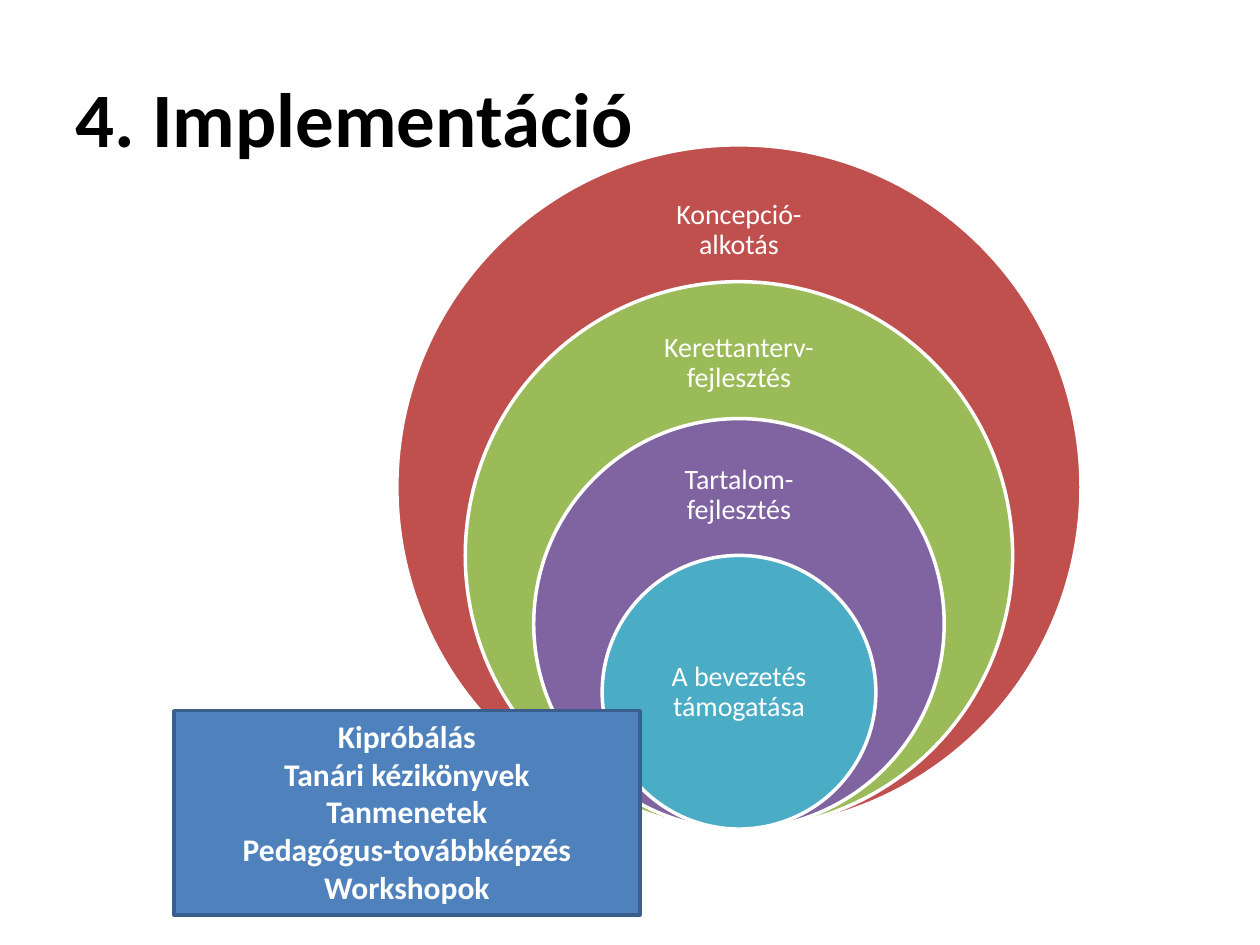
from dataclasses import dataclass

from pptx import Presentation
from pptx.dml.color import RGBColor
from pptx.enum.shapes import MSO_SHAPE as Shape
from pptx.enum.text import MSO_ANCHOR as Anchor, PP_ALIGN as Align
from pptx.util import Inches, Pt


@dataclass(frozen=True)
class Theme:
    font: str = "Calibri"
    dark: str = "000000"
    light: str = "FFFFFF"
    box: str = "4F81BD"
    box_line: str = "3A5F8C"
    rings: tuple = ("C0504D", "9BBB59", "8064A2", "4BACC6")
    title_size: int = 44
    box_size: int = 18
    label_size: int = 16
    line_width: int = 2


THEME = Theme()
WIDTH, HEIGHT = 10, 7.5
CENTER_X, BASE_Y, OUTER = 5.865, 6.58, 5.43

# Label, and its top and height as shares of the circle's diameter
STAGES = [
    ("Koncepció-alkotás", 0.05, 0.15),
    ("Kerettanterv-fejlesztés", 0.06, 0.18),
    ("Tartalom-fejlesztés", 0.075, 0.225),
    ("A bevezetés támogatása", 0.25, 0.5),
]
SUPPORT = ["Kipróbálás", "Tanári kézikönyvek", "Tanmenetek",
           "Pedagógus-továbbképzés", "Workshopok"]


def set_text(s, lines, *, size, color=THEME.light, bold=False,
             align=Align.CENTER, anchor=Anchor.MIDDLE, spacing=None, inset=None):
    tf = s.text_frame
    tf.word_wrap = True
    tf.vertical_anchor = anchor
    if inset is not None:
        tf.margin_left = tf.margin_right = Inches(inset)
        tf.margin_top = tf.margin_bottom = Inches(inset)
    for i, line in enumerate(lines):
        p = tf.add_paragraph() if i else tf.paragraphs[0]
        p.alignment = align
        p.line_spacing = spacing
        r = p.add_run()
        r.text = line
        r.font.name = THEME.font
        r.font.size = Pt(size)
        r.font.bold = bold
        r.font.color.rgb = RGBColor.from_string(color)


def add_textbox(shapes, box, lines, **fmt):
    sp = shapes.add_textbox(*map(Inches, box))
    set_text(sp, lines, **fmt)


def add_filled(shapes, kind, box, fill, line):
    sp = shapes.add_shape(kind, *map(Inches, box))
    sp.shadow.inherit = False
    sp.fill.solid()
    sp.fill.fore_color.rgb = RGBColor.from_string(fill)
    sp.line.color.rgb = RGBColor.from_string(line)
    sp.line.width = Pt(THEME.line_width)
    return sp


def add_stacked_circles(shapes):
    """Draw circles that shrink by a fifth of the outer one and share a base."""
    last = len(STAGES) - 1
    for i, (label, top_share, height_share) in enumerate(STAGES):
        d = OUTER * (1 - i / 5)
        top = BASE_Y - d
        add_filled(shapes, Shape.OVAL, (CENTER_X - d / 2, top, d, d),
                   THEME.rings[i], THEME.light)
        w = 0.71 * d if i == last else 0.28 * OUTER
        add_textbox(shapes,
                    (CENTER_X - w / 2, top + top_share * d, w, height_share * d),
                    [label], size=THEME.label_size, spacing=0.9, inset=0.12)


def main():
    prs = Presentation()
    prs.slide_width, prs.slide_height = Inches(WIDTH), Inches(HEIGHT)
    shapes = prs.slides.add_slide(prs.slide_layouts[6]).shapes

    add_textbox(shapes, (0.05 * WIDTH, 0.04 * HEIGHT, 0.9 * WIDTH, HEIGHT / 6),
                ["4. Implementáció"], size=THEME.title_size, color=THEME.dark,
                bold=True, align=Align.LEFT)
    add_stacked_circles(shapes)
    support = add_filled(shapes, Shape.RECTANGLE, (1.38, 5.64, 3.7, 1.62),
                         THEME.box, THEME.box_line)
    set_text(support, SUPPORT, size=THEME.box_size, bold=True, anchor=Anchor.TOP)

    prs.save("out.pptx")


if __name__ == "__main__":
    main()
